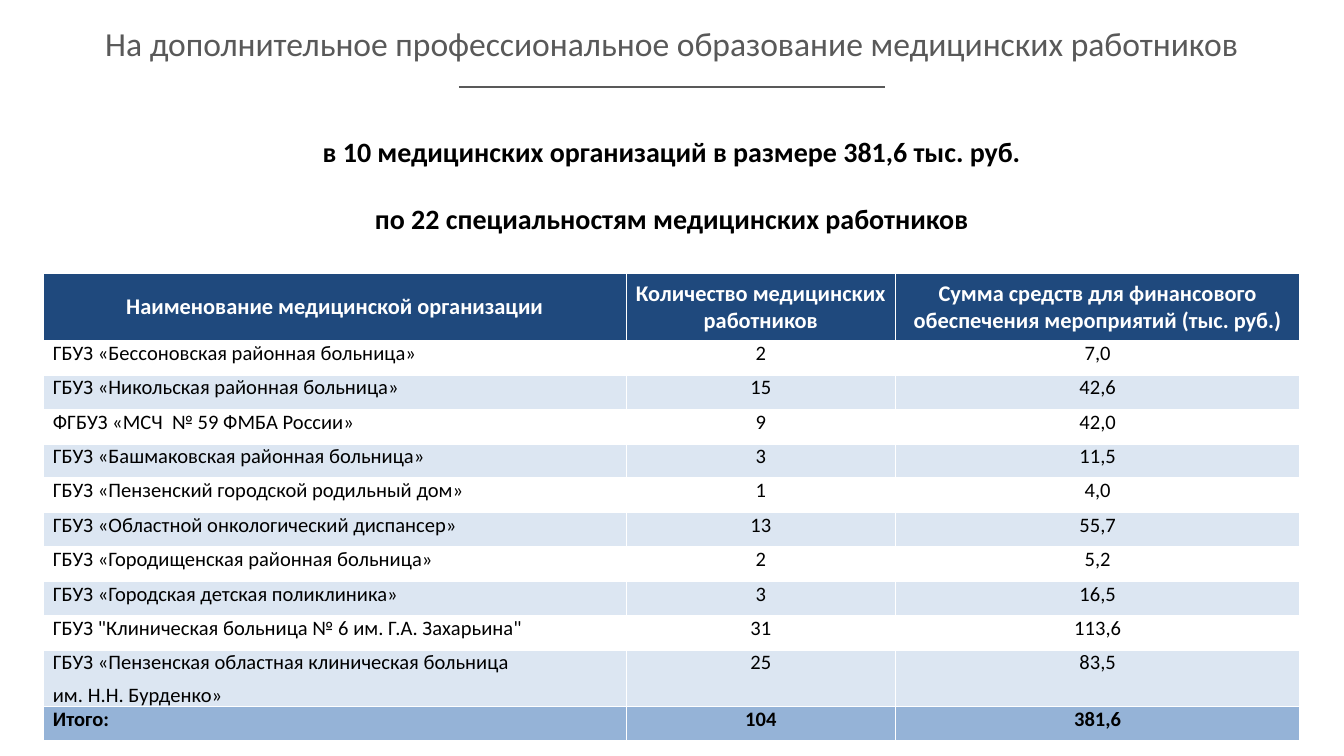
from dataclasses import dataclass

from lxml.etree import SubElement
from pptx import Presentation
from pptx.dml.color import RGBColor
from pptx.enum.shapes import MSO_CONNECTOR
from pptx.enum.text import MSO_ANCHOR, PP_ALIGN
from pptx.oxml.ns import qn
from pptx.util import Cm, Pt


@dataclass(frozen=True)
class Theme:
    font: str = "Calibri"
    grey: str = "595959"
    black: str = "000000"
    white: str = "FFFFFF"
    navy: str = "1F497D"
    pale: str = "DCE6F2"
    blue: str = "95B3D7"
    title: float = 18
    lead: float = 15
    head: float = 12
    body: float = 11
    rule: float = 1


THEME = Theme()
WIDTH, HEIGHT = 25.4, 14.29
COLS = (11.02, 5.08, 7.65)
HEAD_H, ROW_H, TALL_H = 1.27, 0.65, 0.94

HEADS = (
    "Наименование медицинской организации",
    "Количество медицинских работников",
    "Сумма средств для финансового обеспечения мероприятий (тыс. руб.)",
)
ROWS = (
    ("ГБУЗ «Бессоновская районная больница»", "2", "7,0"),
    ("ГБУЗ «Никольская районная больница»", "15", "42,6"),
    ("ФГБУЗ «МСЧ  № 59 ФМБА России»", "9", "42,0"),
    ("ГБУЗ «Башмаковская районная больница»", "3", "11,5"),
    ("ГБУЗ «Пензенский городской родильный дом»", "1", "4,0"),
    ("ГБУЗ «Областной онкологический диспансер»", "13", "55,7"),
    ("ГБУЗ «Городищенская районная больница»", "2", "5,2"),
    ("ГБУЗ «Городская детская поликлиника»", "3", "16,5"),
    ('ГБУЗ "Клиническая больница № 6 им. Г.А. Захарьина"', "31", "113,6"),
    ("ГБУЗ «Пензенская областная клиническая больница\nим. Н.Н. Бурденко»", "25", "83,5"),
)
TOTAL = ("Итого:", "104", "381,6")


def rgb(code):
    return RGBColor.from_string(code)


def write(frame, lines, size, color, bold=False, align=PP_ALIGN.CENTER, before=0, after=0):
    """Fill a text frame with one paragraph per line."""
    frame.word_wrap = True
    for i, line in enumerate(lines):
        para = frame.add_paragraph() if i else frame.paragraphs[0]
        para.alignment = align
        para.space_before = Pt(before if i else 0)
        para.space_after = Pt(after)
        run = para.add_run()
        run.text = line
        font = run.font
        font.name, font.size, font.bold = THEME.font, Pt(size), bold
        font.color.rgb = rgb(color)


def add_text(slide, box, lines, size, color, bold=False, top=0.13, before=0,
             anchor=MSO_ANCHOR.TOP):
    frame = slide.shapes.add_textbox(*map(Cm, box)).text_frame
    frame.margin_top = Cm(top)
    frame.vertical_anchor = anchor
    write(frame, lines, size, color, bold, before=before)


def add_rule(slide, left, right, y):
    line = slide.shapes.add_connector(
        MSO_CONNECTOR.STRAIGHT, Cm(left), Cm(y), Cm(right), Cm(y))
    line.line.color.rgb = rgb(THEME.grey)
    line.line.width = Pt(THEME.rule)
    SubElement(line._element.spPr, qn("a:effectLst"))


def add_edges(cell):
    """Draw a white border on all four sides of a cell."""
    props = cell._tc.get_or_add_tcPr()
    for side in ("lnL", "lnR", "lnT", "lnB"):
        edge = SubElement(props, qn(f"a:{side}"), w=str(Pt(THEME.rule)))
        fill = SubElement(edge, qn("a:solidFill"))
        SubElement(fill, qn("a:srgbClr"), val=THEME.white)


def fill_row(row, texts, fill, color, size, bold=False, head=False):
    for i, (cell, text) in enumerate(zip(row.cells, texts)):
        add_edges(cell)
        cell.fill.solid()
        cell.fill.fore_color.rgb = rgb(fill)
        cell.margin_left = cell.margin_right = Cm(0.15 if head else 0.18)
        cell.margin_top = cell.margin_bottom = 0
        cell.vertical_anchor = MSO_ANCHOR.MIDDLE if head else MSO_ANCHOR.TOP
        align = PP_ALIGN.CENTER if head or i else PP_ALIGN.JUSTIFY
        write(cell.text_frame, text.split("\n"), size, color, bold, align, after=3.8)


def add_grid(slide, left, top):
    highs = [HEAD_H] + [TALL_H if "\n" in row[0] else ROW_H for row in ROWS] + [ROW_H]
    table = slide.shapes.add_table(
        len(highs), len(COLS), Cm(left), Cm(top), Cm(sum(COLS)), Cm(sum(highs))).table
    for col, width in zip(table.columns, COLS):
        col.width = Cm(width)
    for row, high in zip(table.rows, highs):
        row.height = Cm(high)

    first, *mid, last = table.rows
    fill_row(first, HEADS, THEME.navy, THEME.white, THEME.head, bold=True, head=True)
    for i, (row, texts) in enumerate(zip(mid, ROWS)):
        fill_row(row, texts, THEME.pale if i % 2 else THEME.white, THEME.black, THEME.body)
    fill_row(last, TOTAL, THEME.blue, THEME.black, THEME.body, bold=True)


def main():
    deck = Presentation()
    deck.slide_width, deck.slide_height = Cm(WIDTH), Cm(HEIGHT)
    slide = deck.slides.add_slide(deck.slide_layouts[6])
    add_rule(slide, 8.67, WIDTH - 8.67, 1.65)
    add_text(slide, (0, 0, WIDTH, 1.63),
             ["На дополнительное профессиональное образование медицинских работников"],
             THEME.title, THEME.grey, anchor=MSO_ANCHOR.MIDDLE)
    add_text(slide, (0.4, 1.85, WIDTH - 0.8, 2.74),
             ["в 10 медицинских организаций в размере 381,6 тыс. руб.",
              "по 22 специальностям медицинских работников"],
             THEME.lead, THEME.black, bold=True, top=0.69, before=18)
    add_grid(slide, 0.82, 5.17)
    deck.save("out.pptx")


if __name__ == "__main__":
    main()
